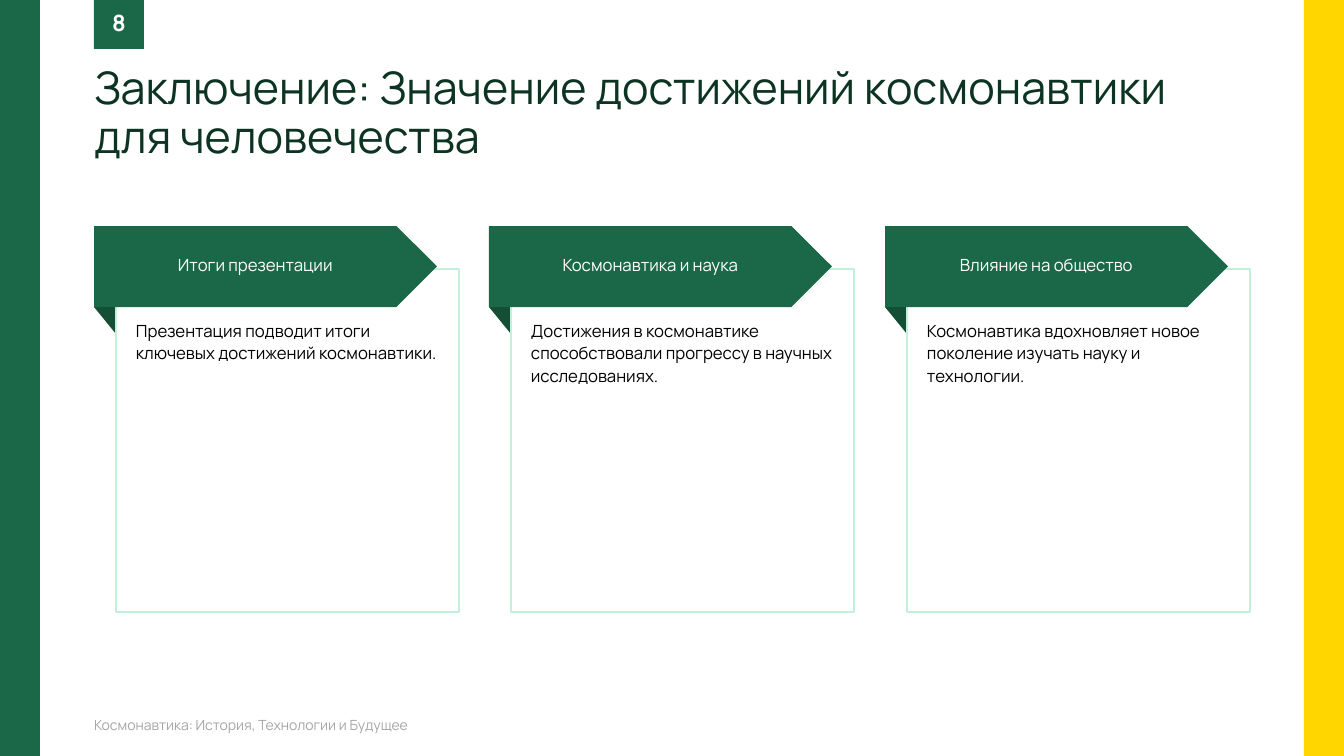
from dataclasses import dataclass

from pptx import Presentation
from pptx.dml.color import RGBColor
from pptx.enum.shapes import MSO_SHAPE
from pptx.enum.text import MSO_ANCHOR, MSO_AUTO_SIZE, PP_ALIGN
from pptx.util import Pt

TITLE = "Заключение: Значение достижений космонавтики для человечества"
FOOTER = "Космонавтика: История, Технологии и Будущее"
PAGE_NUMBER = "8"
CARDS = [
    ("Итоги презентации",
     "Презентация подводит итоги ключевых достижений космонавтики."),
    ("Космонавтика и наука",
     "Достижения в космонавтике способствовали прогрессу в научных исследованиях."),
    ("Влияние на общество",
     "Космонавтика вдохновляет новое поколение изучать науку и технологии."),
]


@dataclass(frozen=True)
class Theme:
    font: str = "Manrope"
    green: str = "1A6847"
    fold: str = "134E35"
    yellow: str = "FFD600"
    outline: str = "C2F0DD"
    white: str = "FFFFFF"
    title: str = "0D3423"
    body: str = "000000"
    footer: str = "A6A6A6"
    title_size: int = 32
    number_size: int = 16
    card_size: int = 12
    footer_size: int = 10


THEME = Theme()
SLIDE_WIDTH, SLIDE_HEIGHT = 1344, 756
BAR_WIDTH = 40
MARGIN = 94
CARD_SIDE = 343
CARD_SPAN = 791
BANNER_TOP, BANNER_HEIGHT = 226, 81
CARD_TOP = 269
FOLD_WIDTH, FOLD_HEIGHT = 22, 27


def px(length):
    return round(length * 914400 / 100.8)


def add_box(page, kind, left, top, width, height, fill, line=None):
    box = page.shapes.add_shape(kind, px(left), px(top), px(width), px(height))
    box.shadow.inherit = False
    box.fill.solid()
    box.fill.fore_color.rgb = RGBColor.from_string(fill)
    if line:
        box.line.color.rgb = RGBColor.from_string(line)
        box.line.width = Pt(1)
    else:
        box.line.fill.background()
    return box


def write(box, text, size, color, anchor=MSO_ANCHOR.MIDDLE, align=PP_ALIGN.LEFT,
          spacing=0.9, before=0, insets=(0, 0, 0, 0), bold=False):
    frame = box.text_frame
    frame.word_wrap = True
    frame.auto_size = MSO_AUTO_SIZE.NONE
    frame.vertical_anchor = anchor
    (frame.margin_left, frame.margin_top,
     frame.margin_right, frame.margin_bottom) = map(px, insets)
    para = frame.paragraphs[0]
    para.alignment = align
    para.line_spacing = spacing
    para.space_before = Pt(before)
    span = para.add_run()
    span.text = text
    span.font.name = THEME.font
    span.font.size = Pt(size)
    span.font.bold = bold
    span.font.color.rgb = RGBColor.from_string(color)


def add_card(page, left, heading, body):
    card_left = left + FOLD_WIDTH
    fold = add_box(page, MSO_SHAPE.RIGHT_TRIANGLE, left, BANNER_TOP + BANNER_HEIGHT,
                   FOLD_WIDTH, FOLD_HEIGHT, THEME.fold)
    fold.rotation = 180
    card = add_box(page, MSO_SHAPE.RECTANGLE, card_left, CARD_TOP,
                   CARD_SIDE, CARD_SIDE, THEME.white, THEME.outline)
    write(card, body, THEME.card_size, THEME.body, anchor=MSO_ANCHOR.TOP,
          spacing=1.1, insets=(20, 50, 20, 0))
    banner = add_box(page, MSO_SHAPE.PENTAGON, left, BANNER_TOP,
                     CARD_SIDE, BANNER_HEIGHT, THEME.green)
    write(banner, heading, THEME.card_size, THEME.white, align=PP_ALIGN.CENTER)


def main():
    deck = Presentation()
    deck.slide_width, deck.slide_height = px(SLIDE_WIDTH), px(SLIDE_HEIGHT)
    page = deck.slides.add_slide(deck.slide_layouts[5])

    for left, color in ((0, THEME.green), (SLIDE_WIDTH - BAR_WIDTH, THEME.yellow)):
        add_box(page, MSO_SHAPE.RECTANGLE, left, 0, BAR_WIDTH, SLIDE_HEIGHT, color)

    title = page.shapes.title
    title.left, title.top = px(MARGIN), px(0)
    title.width, title.height = px(1156), px(163)
    write(title, TITLE, THEME.title_size, THEME.title,
          anchor=MSO_ANCHOR.BOTTOM, before=10)

    badge = add_box(page, MSO_SHAPE.RECTANGLE, MARGIN, -1, 50, 50, THEME.green)
    write(badge, PAGE_NUMBER, THEME.number_size, THEME.white, align=PP_ALIGN.CENTER,
          before=10, insets=(10, 5, 10, 5), bold=True)

    for index, (heading, body) in enumerate(CARDS):
        left = MARGIN + index * CARD_SPAN // (len(CARDS) - 1)
        add_card(page, left, heading, body)

    footer = page.shapes.add_textbox(px(MARGIN), px(716), px(663), px(20))
    write(footer, FOOTER, THEME.footer_size, THEME.footer, before=10)

    deck.save("out.pptx")


if __name__ == "__main__":
    main()
